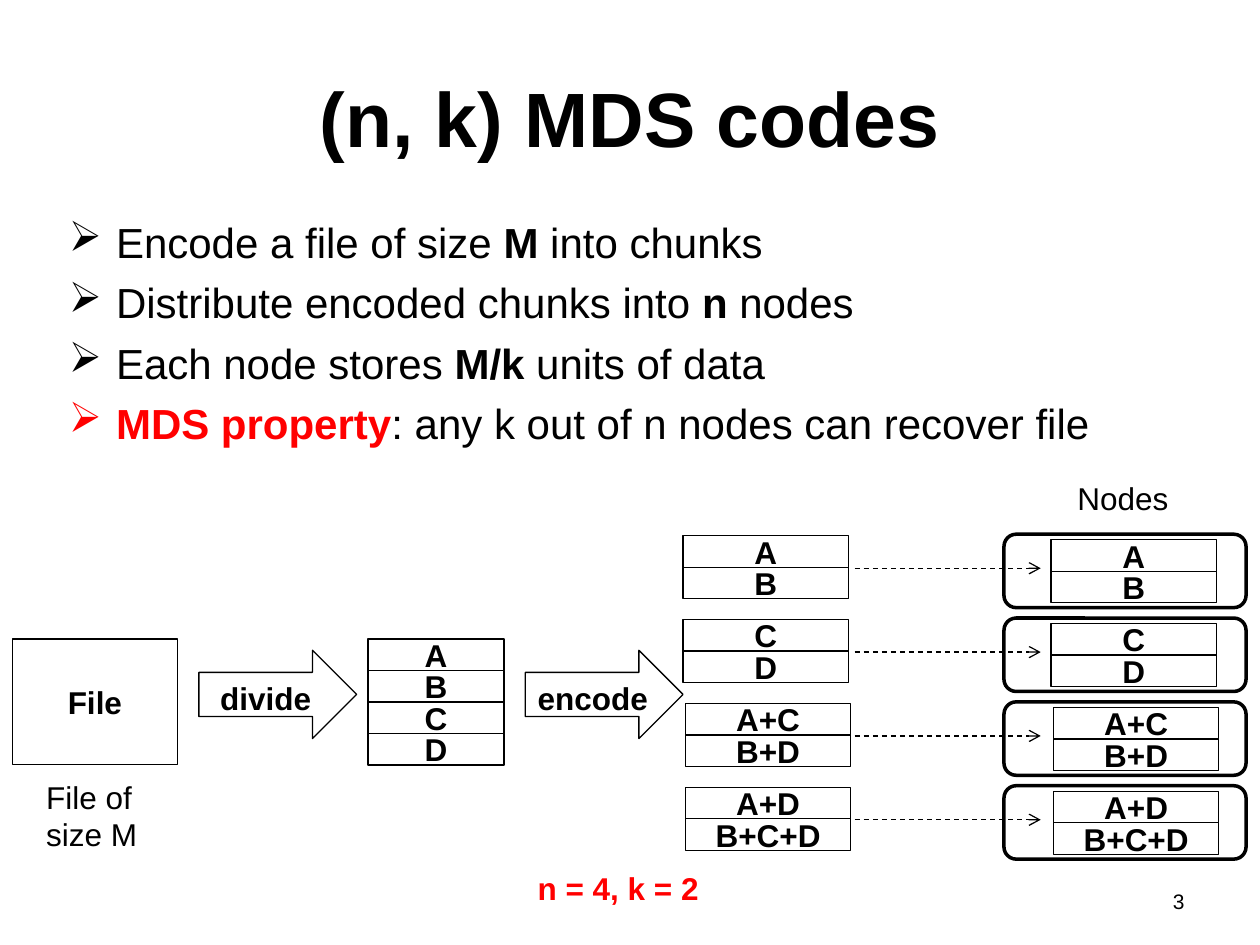
from lxml.etree import SubElement
from pptx import Presentation
from pptx.dml.color import RGBColor
from pptx.enum.dml import MSO_LINE
from pptx.enum.shapes import MSO_CONNECTOR, MSO_SHAPE
from pptx.enum.text import MSO_ANCHOR, PP_ALIGN
from pptx.oxml.ns import qn
from pptx.util import Cm, Pt

BLACK = RGBColor(0, 0, 0)
RED = RGBColor(255, 0, 0)
WHITE = RGBColor(255, 255, 255)

CHUNK_HEIGHT = 0.635
CHUNK_WIDTH = 3.33
ROW_PITCH = 1.69
ROWS = [("A", "B"), ("C", "D"), ("A+C", "B+D"), ("A+D", "B+C+D")]
BULLETS = [
    [("Encode a file of size ", False, BLACK), ("M", True, BLACK), (" into chunks", False, BLACK)],
    [("Distribute encoded chunks into ", False, BLACK), ("n", True, BLACK), (" nodes", False, BLACK)],
    [("Each node stores ", False, BLACK), ("M/k", True, BLACK), (" units of data", False, BLACK)],
    [("MDS property", True, RED), (": any k out of n nodes can recover file", False, BLACK)],
]


def style(para, size, bold=False, color=BLACK, align=PP_ALIGN.LEFT):
    para.alignment = align
    para.font.name = "Arial"
    para.font.size = Pt(size)
    para.font.bold = bold
    para.font.color.rgb = color


def add_text(page, left, top, width, height, text, size=18, bold=False, color=BLACK,
             align=PP_ALIGN.LEFT, anchor=MSO_ANCHOR.TOP, wrap=False):
    box = page.shapes.add_textbox(Cm(left), Cm(top), Cm(width), Cm(height))
    frame = box.text_frame
    frame.word_wrap = wrap
    frame.vertical_anchor = anchor
    frame.text = text
    for para in frame.paragraphs:
        style(para, size, bold, color, align)


def add_outline(page, kind, left, top, width, height, weight=0.75, fill=None):
    shape = page.shapes.add_shape(kind, Cm(left), Cm(top), Cm(width), Cm(height))
    shape.shadow.inherit = False
    shape.line.color.rgb = BLACK
    shape.line.width = Pt(weight)
    if fill is None:
        shape.fill.background()
    else:
        shape.fill.solid()
        shape.fill.fore_color.rgb = fill
    return shape


def add_label_box(page, left, top, width, height, text, fill=None):
    frame = add_outline(page, MSO_SHAPE.RECTANGLE, left, top, width, height, fill=fill).text_frame
    frame.margin_top = frame.margin_bottom = 0
    frame.vertical_anchor = MSO_ANCHOR.MIDDLE
    frame.text = text
    style(frame.paragraphs[0], 18, True, align=PP_ALIGN.CENTER)


def add_stack(page, left, top, width, labels, fill=None):
    for index, label in enumerate(labels):
        add_label_box(page, left, top + index * CHUNK_HEIGHT, width, CHUNK_HEIGHT, label, fill)


def add_step_arrow(page, left, top, text, inset):
    frame = add_outline(page, MSO_SHAPE.RIGHT_ARROW, left, top, 3.18, 1.78).text_frame
    frame.vertical_anchor = MSO_ANCHOR.TOP
    frame.margin_left = Cm(inset)
    frame.margin_right = 0
    frame.text = text
    style(frame.paragraphs[0], 18, True)


def add_dashed_arrow(page, left, right, level):
    arrow = page.shapes.add_connector(MSO_CONNECTOR.STRAIGHT, Cm(left), Cm(level), Cm(right), Cm(level))
    arrow.line.color.rgb = BLACK
    arrow.line.width = Pt(0.75)
    arrow.line.dash_style = MSO_LINE.DASH
    SubElement(arrow.line._get_or_add_ln(), qn("a:tailEnd"), type="arrow")
    SubElement(arrow._element.spPr, qn("a:effectLst"))


def add_bullets(page, left, top, width, height):
    frame = page.shapes.add_textbox(Cm(left), Cm(top), Cm(width), Cm(height)).text_frame
    frame.word_wrap = True
    for index, parts in enumerate(BULLETS):
        para = frame.paragraphs[0] if index == 0 else frame.add_paragraph()
        style(para, 24)
        para.space_before = Pt(5.7)
        properties = para._p.get_or_add_pPr()
        properties.set("marL", str(Cm(1.45)))
        properties.set("indent", str(-Cm(0.95)))
        bullet = SubElement(properties, qn("a:buChar"), char="➢")
        properties.remove(bullet)
        properties.find(qn("a:defRPr")).addprevious(bullet)
        for text, bold, color in parts:
            span = para.add_run()
            span.text = text
            span.font.bold = bold
            span.font.color.rgb = color


def add_source_file(page, left, top):
    add_label_box(page, left, top, CHUNK_WIDTH, 2.54, "File")
    add_text(page, left + 0.43, top + 2.67, 2.44, 1.8, "File of\nsize M")


def add_distribution(page, left, top):
    add_text(page, left + 7.7, top - 1.27, 2.36, 1.02, "Nodes")
    for index, labels in enumerate(ROWS):
        row_top = top + index * ROW_PITCH
        shift = 0.05 if index >= 2 else 0
        add_outline(page, MSO_SHAPE.ROUNDED_RECTANGLE, left + 6.47, row_top - 0.03, 4.88, 1.48, 2)
        add_stack(page, left + shift, row_top, CHUNK_WIDTH, labels, WHITE)
        add_stack(page, left + 7.42 + shift, row_top + 0.08, CHUNK_WIDTH, labels, WHITE)
        add_dashed_arrow(page, left + 3.46, left + 7.21, row_top + CHUNK_HEIGHT + 0.02)


def main():
    deck = Presentation()
    deck.slide_width, deck.slide_height = Cm(25.4), Cm(19.05)
    page = deck.slides.add_slide(deck.slide_layouts[6])
    add_text(page, 1.27, 0.76, 22.86, 4.6 / 1.45, "(n, k) MDS codes", 44, True,
             align=PP_ALIGN.CENTER, anchor=MSO_ANCHOR.MIDDLE, wrap=True)
    add_bullets(page, 0.64, 4.24, 23.5, 5.72)
    add_source_file(page, 0.25, 12.88)
    add_step_arrow(page, 4.01, 13.11, "divide", 0.43)
    add_stack(page, 7.42, 12.88, 2.74, "ABCD")
    add_step_arrow(page, 10.59, 13.11, "encode", 0.25)
    add_distribution(page, 13.77, 10.8)
    add_text(page, 10.59, 17.4, 3.78, 1.02, "n = 4, k = 2", bold=True, color=RED)
    add_text(page, 18.21, 17.78, 5.92, 0.89, "3", 12, align=PP_ALIGN.RIGHT, wrap=True)
    deck.save("out.pptx")


if __name__ == "__main__":
    main()
